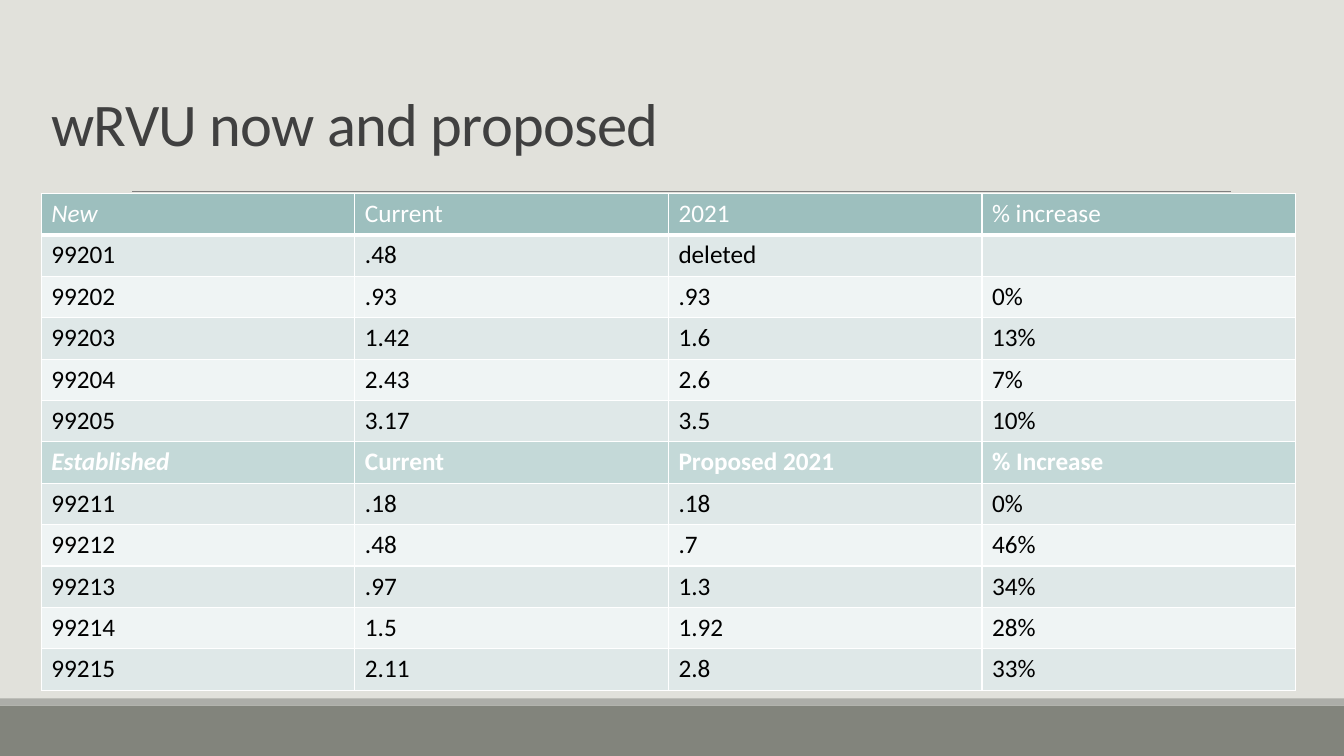
"""Build the slide that compares current and proposed wRVU values."""
from dataclasses import dataclass

from lxml import etree
from pptx import Presentation
from pptx.dml.color import RGBColor
from pptx.enum import shapes, text
from pptx.oxml import ns
from pptx.util import Inches, Pt


@dataclass(frozen=True)
class Theme:
    """Colours, font and type sizes."""
    back: str = "E1E1DB"
    foot: str = "82847C"
    strip: str = "ACADA8"
    rule: str = "808080"
    title: str = "404040"
    ink: str = "000000"
    white: str = "FFFFFF"
    head: str = "9DBFBE"
    sub: str = "C4D9D8"
    odd: str = "DFE8E8"
    even: str = "EFF4F4"
    font: str = "Calibri"
    big: float = 43.2
    body: float = 18


theme = Theme()


def add_run(para, words, size, color, bold=False, italic=False):
    """Add one styled run to a paragraph."""
    run = para.add_run()
    run.text = words
    font = run.font
    font.name, font.size = theme.font, Pt(size)
    font.bold, font.italic = bold, italic
    font.color.rgb = RGBColor.from_string(color)
    return run


def add_edge(cell, side, width):
    """Draw a white border on one side of a cell."""
    line = etree.SubElement(cell._tc.get_or_add_tcPr(), ns.qn("a:" + side), w=str(Pt(width)))
    fill = etree.SubElement(line, ns.qn("a:solidFill"))
    etree.SubElement(fill, ns.qn("a:srgbClr"), val=theme.white)


deck = Presentation()
deck.slide_width, deck.slide_height = Inches(13.33), Inches(7.5)
slide = deck.slides.add_slide(deck.slide_layouts[6])
slide.background.fill.solid()
slide.background.fill.fore_color.rgb = RGBColor.from_string(theme.back)

for top, high, color in ((7, 0.5, theme.foot), (6.93, 0.07, theme.strip)):
    bar = slide.shapes.add_shape(
        shapes.MSO_SHAPE.RECTANGLE, 0, Inches(top), deck.slide_width, Inches(high))
    bar.shadow.inherit = False
    bar.fill.solid()
    bar.fill.fore_color.rgb = RGBColor.from_string(color)
    bar.line.fill.background()

rule = slide.shapes.add_connector(
    shapes.MSO_CONNECTOR.STRAIGHT, Inches(1.31), Inches(1.9), Inches(12.21), Inches(1.9))
rule.line.color.rgb = RGBColor.from_string(theme.rule)
rule.line.width = Pt(0.5)
etree.SubElement(rule._element.spPr, ns.qn("a:effectLst"))

title = slide.shapes.add_textbox(Inches(0.41), Inches(0.9), Inches(11.79), Inches(0.73))
frame = title.text_frame
frame.word_wrap = True
frame.vertical_anchor = text.MSO_ANCHOR.BOTTOM
frame.paragraphs[0].line_spacing = 0.85
run = add_run(frame.paragraphs[0], "wRVU now and proposed", theme.big, theme.title)
run.font._element.set("spc", "-50")

rows = (
    ("New", "Current", "2021", "% increase"),
    ("99201", ".48", "deleted", ""),
    ("99202", ".93", ".93", "0%"),
    ("99203", "1.42", "1.6", "13%"),
    ("99204", "2.43", "2.6", "7%"),
    ("99205", "3.17", "3.5", "10%"),
    ("Established", "Current", "Proposed 2021", "% Increase"),
    ("99211", ".18", ".18", "0%"),
    ("99212", ".48", ".7", "46%"),
    ("99213", ".97", "1.3", "34%"),
    ("99214", "1.5", "1.92", "28%"),
    ("99215", "2.11", "2.8", "33%"),
)
heads = {0: theme.head, 6: theme.sub}
table = slide.shapes.add_table(
    len(rows), len(rows[0]), Inches(0.41), Inches(1.92), Inches(12.44), Inches(4.93)).table

for r, row in enumerate(rows):
    for c, words in enumerate(row):
        cell = table.cell(r, c)
        for side in ("lnL", "lnR", "lnT", "lnB"):
            add_edge(cell, side, 3 if r == 0 and side == "lnB" else 1)
        cell.fill.solid()
        cell.fill.fore_color.rgb = RGBColor.from_string(
            heads.get(r, theme.odd if r % 2 else theme.even))
        if words:
            add_run(cell.text_frame.paragraphs[0], words, theme.body,
                    theme.white if r in heads else theme.ink,
                    bold=r == 6, italic=r in heads and c == 0)

deck.save("out.pptx")
